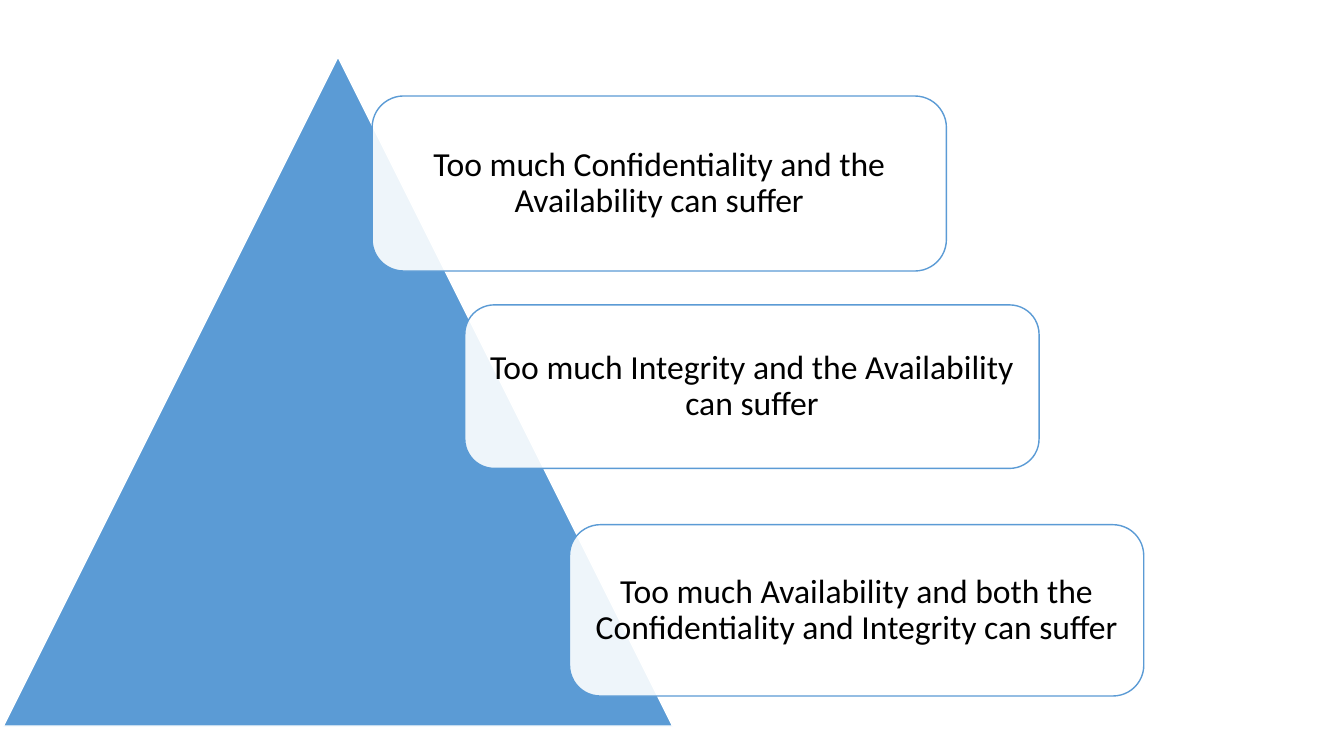
"""Build a slide on the trade-offs between confidentiality, integrity and availability."""
from lxml import etree
from pptx import Presentation
from pptx.dml.color import RGBColor
from pptx.enum.shapes import MSO_SHAPE
from pptx.enum.text import MSO_ANCHOR, PP_ALIGN
from pptx.oxml.ns import qn
from pptx.util import Pt

TRIANGLE = MSO_SHAPE.ISOSCELES_TRIANGLE
ROUNDED = MSO_SHAPE.ROUNDED_RECTANGLE
MIDDLE = MSO_ANCHOR.MIDDLE
CENTER = PP_ALIGN.CENTER

BLUE = RGBColor(0x5B, 0x9B, 0xD5)
WHITE = RGBColor(0xFF, 0xFF, 0xFF)
BLACK = RGBColor(0x00, 0x00, 0x00)

BOX_WIDTH = 410.2
BOX_INSET = Pt(3)
TRADE_OFFS = [
    (265.8, 68.6, 125, "Too much Confidentiality and the Availability can suffer"),
    (332, 217.8, 116.8, "Too much Integrity and the Availability can suffer"),
    (406.8, 374.8, 122.4, "Too much Availability and both the Confidentiality and Integrity can suffer"),
]

deck = Presentation()
deck.slide_width = Pt(960)
deck.slide_height = Pt(540)
page = deck.slides.add_slide(deck.slide_layouts[6])


def add_figure(preset, left, top, width, height, fill, line):
    figure = page.shapes.add_shape(preset, Pt(left), Pt(top), Pt(width), Pt(height))
    figure.shadow.inherit = False
    figure.fill.solid()
    figure.fill.fore_color.rgb = fill
    figure.line.color.rgb = line
    figure.line.width = Pt(1)
    return figure


add_figure(TRIANGLE, 2.4, 40.6, 478, 478, BLUE, WHITE)

for left, top, height, wording in TRADE_OFFS:
    box = add_figure(ROUNDED, left, top, BOX_WIDTH, height, WHITE, BLUE)
    box.adjustments[0] = 0.18
    fill_color = box.fill._xPr.find(qn("a:solidFill"))[0]
    etree.SubElement(fill_color, qn("a:alpha"), val="90000")

    frame = box.text_frame
    frame.text = wording
    frame.word_wrap = True
    frame.vertical_anchor = MIDDLE
    frame.margin_left = frame.margin_right = BOX_INSET
    frame.margin_top = frame.margin_bottom = BOX_INSET

    para = frame.paragraphs[0]
    para.alignment = CENTER
    para.line_spacing = 0.9
    span = para.runs[0]
    span.font.name = "Calibri"
    span.font.size = Pt(24)
    span.font.color.rgb = BLACK

deck.save("out.pptx")
